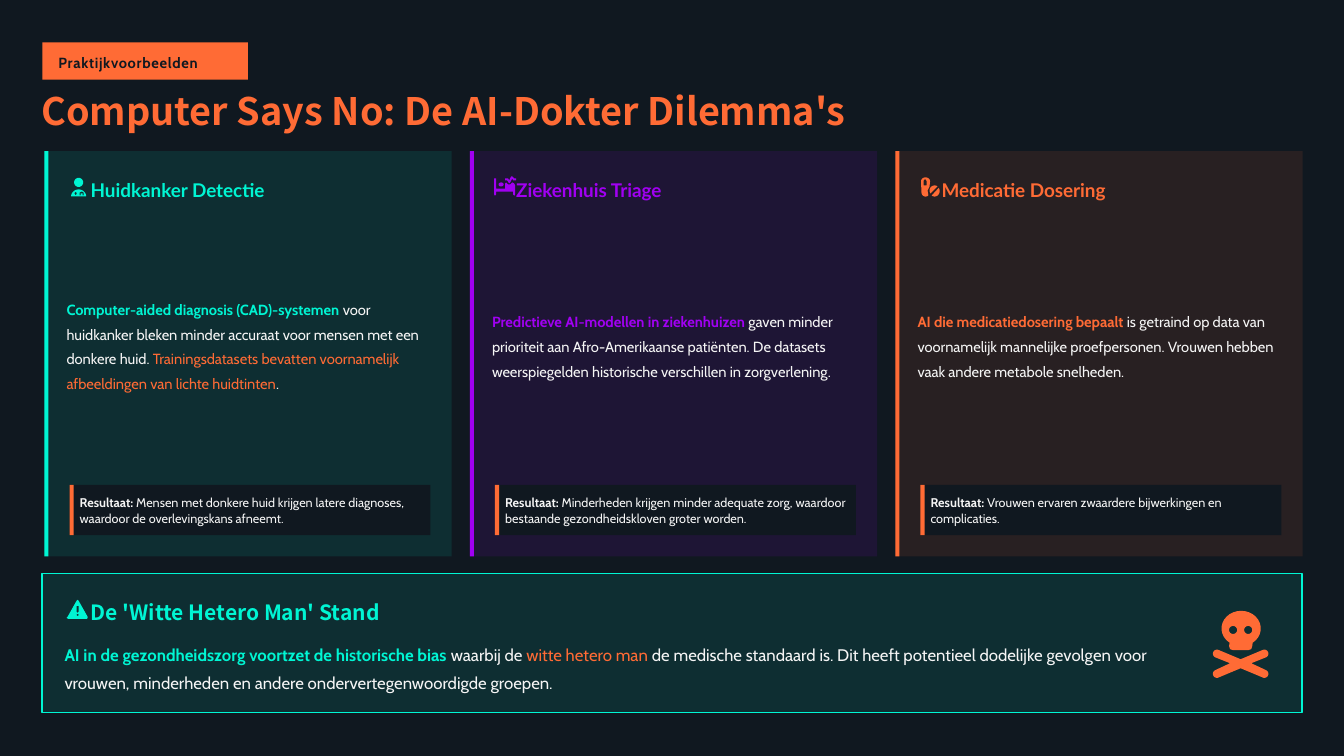
from math import cos, radians, sin

from lxml import etree
from pptx import Presentation
from pptx import util as u
from pptx.dml.color import RGBColor
from pptx.enum import shapes, text
from pptx.oxml.ns import qn

Inches = u.Inches
COLORS = {"night": "101820", "orange": "FF6B35", "mint": "00F5D3",
          "purple": "A100F2", "white": "F5F5F5"}
CARD_LEFT, CARD_TOP, CARD_PITCH = 0.44, 1.5, 4.22
CARD_WIDTH, CARD_HEIGHT, BAR_WIDTH = 4.04, 4.02, 0.04


def rgb(name):
    return RGBColor.from_string(COLORS[name])


def paint(shape, color):
    shape.shadow.inherit = False
    shape.fill.solid()
    shape.fill.fore_color.rgb = rgb(color)
    shape.line.fill.background()


def add_block(slide, left, top, width, height, color, alpha=None, border=None):
    """Draw a filled rectangle; alpha is its opacity in percent."""
    block = slide.shapes.add_shape(
        shapes.MSO_SHAPE.RECTANGLE,
        Inches(left), Inches(top), Inches(width), Inches(height))
    paint(block, color)
    if alpha is not None:
        tint = block.fill._xPr.find(qn("a:solidFill"))[0]
        etree.SubElement(tint, qn("a:alpha")).set("val", str(alpha * 1000))
    if border:
        block.line.color.rgb = rgb(border)
        block.line.width = u.Pt(1.25)


def add_icon(slide, x, y, color, contours):
    """Fill closed contours as one outline; inner contours become holes."""
    builder = None
    for contour in contours:
        points = [(Inches(x + px), Inches(y + py)) for px, py in contour]
        if builder is None:
            builder = slide.shapes.build_freeform(*points[0], scale=1.0)
        else:
            builder.move_to(*points[0])
        builder.add_line_segments(points[1:], close=True)
    paint(builder.convert_to_shape(), color)


def arc(cx, cy, rx, ry, start=0, end=360):
    """Points on an ellipse, clockwise from the right, in degrees."""
    steps = 24
    angles = [radians(start + (end - start) * i / steps) for i in range(steps + 1)]
    return [(cx + rx * cos(a), cy + ry * sin(a)) for a in angles]


def add_text(slide, left, top, width, height, runs, *, size, font="Cabin",
             spacing=1.2, inset=(0, 0), tracking=None):
    """Write one paragraph from (words, colour, bold) runs."""
    box = slide.shapes.add_textbox(
        Inches(left), Inches(top), Inches(width), Inches(height))
    frame = box.text_frame
    frame.word_wrap = True
    frame.vertical_anchor = text.MSO_ANCHOR.MIDDLE
    frame.margin_left = frame.margin_right = Inches(inset[0])
    frame.margin_top = frame.margin_bottom = Inches(inset[1])
    paragraph = frame.paragraphs[0]
    paragraph.line_spacing = spacing
    for words, color, bold in runs:
        run = paragraph.add_run()
        run.text = words
        run.font.name = font
        run.font.size = u.Pt(size)
        run.font.bold = bold
        run.font.color.rgb = rgb(color)
        if tracking:
            run._r.get_or_add_rPr().set("spc", str(tracking))


DOCTOR = [
    arc(0.34, 0.31, 0.045, 0.045),
    arc(0.34, 0.45, 0.075, 0.07, 180, 360),
    arc(0.31, 0.42, 0.01, 0.015),
    [(0.35, 0.44), (0.35, 0.41), (0.37, 0.4), (0.39, 0.41), (0.39, 0.44),
     (0.38, 0.44), (0.38, 0.42), (0.36, 0.42), (0.36, 0.44)],
]
HOSPITAL_BED = [
    [(0.24, 0.27), (0.26, 0.27), (0.26, 0.37), (0.35, 0.37), (0.35, 0.32),
     (0.36, 0.31), (0.38, 0.33), (0.4, 0.33), (0.42, 0.31), (0.44, 0.32),
     (0.45, 0.34), (0.45, 0.43), (0.44, 0.44), (0.43, 0.43), (0.43, 0.4),
     (0.26, 0.4), (0.26, 0.43), (0.25, 0.44), (0.24, 0.43)],
    arc(0.31, 0.33, 0.025, 0.02),
    [(0.35, 0.27), (0.38, 0.27), (0.39, 0.29), (0.41, 0.25), (0.42, 0.25),
     (0.44, 0.27), (0.46, 0.27), (0.46, 0.29), (0.43, 0.29), (0.42, 0.27),
     (0.4, 0.31), (0.39, 0.32), (0.37, 0.29), (0.35, 0.29)],
]
PILLS = [
    arc(0.3, 0.3, 0.045, 0.04, 180, 360) + [(0.34, 0.35), (0.32, 0.39)]
    + arc(0.3, 0.41, 0.04, 0.04, 45, 180),
    arc(0.295, 0.3, 0.015, 0.02, 180, 360) + [(0.31, 0.34), (0.28, 0.34)],
    arc(0.39, 0.39, 0.05, 0.05, 145, 305),
    arc(0.39, 0.395, 0.05, 0.055, -35, 125),
]
WARNING = [
    [(0.1, 0.01), (0.11, 0), (0.12, 0.01), (0.21, 0.17), (0.21, 0.18),
     (0.2, 0.19), (0.02, 0.19), (0, 0.18), (0.01, 0.17)],
    [(0.1, 0.06), (0.12, 0.06), (0.12, 0.12), (0.11, 0.13), (0.1, 0.12)],
    arc(0.11, 0.15, 0.01, 0.01),
]
SKULL = [
    arc(0.28, 0.175, 0.195, 0.175, 126, 414)
    + [(0.39, 0.35), (0.38, 0.38), (0.35, 0.39), (0.2, 0.39), (0.17, 0.38),
       (0.16, 0.35)],
    arc(0.2, 0.19, 0.04, 0.04),
    arc(0.35, 0.19, 0.04, 0.04),
    arc(0.04, 0.425, 0.04, 0.04, 113, 293) + [(0.275, 0.48)]
    + arc(0.51, 0.425, 0.04, 0.04, 247, 427) + [(0.38, 0.52)]
    + arc(0.51, 0.625, 0.04, 0.04, 293, 473) + [(0.275, 0.57)]
    + arc(0.04, 0.625, 0.04, 0.04, 67, 247) + [(0.17, 0.52)],
]
CARDS = [
    ("Huidkanker Detectie", "mint", DOCTOR,
     [("Computer-aided diagnosis (CAD)-systemen", "mint", True),
      (" voor huidkanker bleken minder accuraat voor mensen met een donkere "
       "huid. ", "white", False),
      ("Trainingsdatasets bevatten voornamelijk afbeeldingen van lichte "
       "huidtinten", "orange", False),
      (".", "white", False)],
     " Mensen met donkere huid krijgen latere diagnoses, waardoor de "
     "overlevingskans afneemt."),
    ("Ziekenhuis Triage", "purple", HOSPITAL_BED,
     [("Predictieve AI-modellen in ziekenhuizen", "purple", True),
      (" gaven minder prioriteit aan Afro-Amerikaanse patiënten. De datasets "
       "weerspiegelden historische verschillen in zorgverlening.",
       "white", False)],
     " Minderheden krijgen minder adequate zorg, waardoor bestaande "
     "gezondheidskloven groter worden."),
    ("Medicatie Dosering", "orange", PILLS,
     [("AI die medicatiedosering bepaalt", "orange", True),
      (" is getraind op data van voornamelijk mannelijke proefpersonen. "
       "Vrouwen hebben vaak andere metabole snelheden.", "white", False)],
     " Vrouwen ervaren zwaardere bijwerkingen en complicaties."),
]


def add_card(slide, x, heading, accent, icon, story, result):
    y = CARD_TOP
    add_block(slide, x, y, CARD_WIDTH, CARD_HEIGHT, accent, alpha=10)
    add_block(slide, x, y, BAR_WIDTH, CARD_HEIGHT, accent)
    add_icon(slide, x, y, accent, icon)
    add_text(slide, x + 0.46, y + 0.21, 3.46, 0.29, [(heading, accent, True)],
             size=13.5, font="Lato", spacing=1.3)
    add_text(slide, x + 0.22, y + 0.62, 3.68, 2.57, story, size=10.5, spacing=1.4)
    add_block(slide, x + 0.25, y + 3.31, 3.58, 0.5, "night")
    add_block(slide, x + 0.25, y + 3.31, BAR_WIDTH, 0.5, "orange")
    add_text(slide, x + 0.35, y + 3.39, 3.46, 0.33,
             [("Resultaat:", "white", True), (result, "white", False)],
             size=9, spacing=1.1)


def add_header(slide):
    add_block(slide, 0.42, 0.42, 2.04, 0.37, "orange")
    add_text(slide, 0.41, 0.41, 2.11, 0.38,
             [("Praktijkvoorbeelden", "night", True)],
             size=10.5, inset=(0.17, 0.08), tracking=50)
    add_text(slide, 0.41, 0.91, 12.69, 0.42,
             [("Computer Says No: De AI-Dokter Dilemma's", "orange", True)],
             size=27, font="Noto Sans CJK SC", spacing=0.9)


def add_conclusion(slide):
    add_block(slide, 0.42, 5.69, 12.49, 1.38, "mint", alpha=10, border="mint")
    add_icon(slide, 0.66, 5.95, "mint", WARNING)
    add_text(slide, 0.9, 5.9, 10.96, 0.29,
             [("De 'Witte Hetero Man' Stand", "mint", True)],
             size=15, font="Noto Sans CJK SC")
    add_text(slide, 0.64, 6.32, 11.2, 0.55,
             [("AI in de gezondheidszorg voortzet de historische bias",
               "mint", True),
              (" waarbij de ", "white", False),
              ("witte hetero man", "orange", False),
              (" de medische standaard is. Dit heeft potentieel dodelijke "
               "gevolgen voor vrouwen, minderheden en andere "
               "ondervertegenwoordigde groepen.", "white", False)],
             size=12, spacing=1.4)
    add_icon(slide, 12.03, 6.06, "orange", SKULL)


def main():
    deck = Presentation()
    deck.slide_width, deck.slide_height = Inches(13.33), Inches(7.5)
    slide = deck.slides.add_slide(deck.slide_layouts[6])
    slide.background.fill.solid()
    slide.background.fill.fore_color.rgb = rgb("night")
    add_header(slide)
    for column, card in enumerate(CARDS):
        add_card(slide, CARD_LEFT + column * CARD_PITCH, *card)
    add_conclusion(slide)
    deck.save("out.pptx")


if __name__ == "__main__":
    main()
